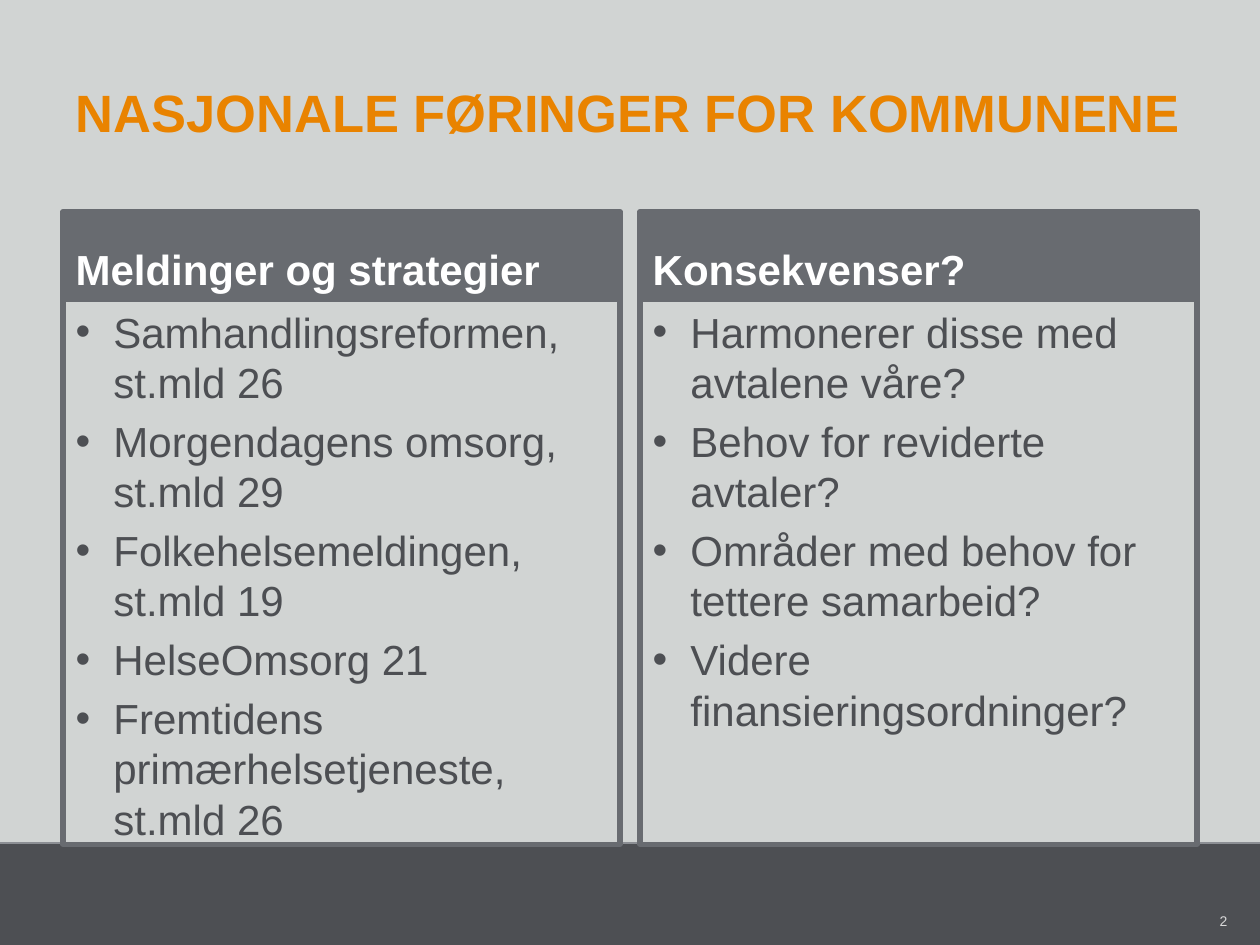
from dataclasses import dataclass

from lxml import etree
from pptx import Presentation
from pptx.dml.color import RGBColor
from pptx.enum.shapes import MSO_CONNECTOR, MSO_SHAPE
from pptx.enum.text import MSO_ANCHOR as Anchor, MSO_AUTO_SIZE as AutoSize, PP_ALIGN as Align
from pptx.oxml.ns import qn
from pptx.util import Inches, Pt


@dataclass(frozen=True)
class Theme:
    font: str = "Arial"
    backdrop: str = "D1D4D3"
    band: str = "4D4F53"
    band_edge: str = "8C8F94"
    panel: str = "686B70"
    accent: str = "E98300"
    body: str = "4D4F53"
    light: str = "FFFFFF"
    number: str = "D9D9D9"
    title_size: int = 30
    text_size: int = 24
    number_size: int = 8


THEME = Theme()
COMPARISON_LAYOUT = 4
BAND_TOP = 6.69
PANEL_LEFT, PANEL_TOP = 0.5, 1.68
PANEL_WIDTH, PANEL_GAP = 4.42, 0.16
HEAD_HEIGHT, LIST_HEIGHT = 0.7, 4.32
BULLET_INDENT = 0.3

COLUMNS = [
    ("Meldinger og strategier", [
        "Samhandlingsreformen, st.mld 26",
        "Morgendagens omsorg, st.mld 29",
        "Folkehelsemeldingen, st.mld 19",
        "HelseOmsorg 21",
        "Fremtidens primærhelsetjeneste, st.mld 26",
    ]),
    ("Konsekvenser?", [
        "Harmonerer disse med avtalene våre?",
        "Behov for reviderte avtaler?",
        "Områder med behov for tettere samarbeid?",
        "Videre finansieringsordninger?",
    ]),
]


def rgb(value):
    return RGBColor.from_string(value)


def set_all(target, values):
    for name, value in values.items():
        setattr(target, name, value)


def place(shape, left, top, width, height):
    set_all(shape, {"left": Inches(left), "top": Inches(top),
                    "width": Inches(width), "height": Inches(height)})


def write(shape, lines, size, color, bold=False, anchor=Anchor.TOP, align=Align.LEFT,
          bullets=False):
    frame = shape.text_frame
    set_all(frame, {"word_wrap": True, "auto_size": AutoSize.NONE, "vertical_anchor": anchor})
    for index, line in enumerate(lines):
        para = frame.add_paragraph() if index else frame.paragraphs[0]
        span = para.add_run()
        span.text = line
        if bullets:
            add_bullet(para)
        set_all(para, {"alignment": align, "line_spacing": 1.0,
                       "space_before": Pt(0.2 * size if index else 0)})
        set_all(span.font, {"name": THEME.font, "size": Pt(size), "bold": bold})
        span.font.color.rgb = rgb(color)


def add_bullet(para):
    props = para._p.get_or_add_pPr()
    props.set("marL", str(Inches(BULLET_INDENT)))
    props.set("indent", str(-Inches(BULLET_INDENT)))
    etree.SubElement(props, qn("a:buChar")).set("char", "•")


def outline(shape, color, width):
    shape.line.color.rgb = rgb(color)
    shape.line.width = Pt(width)


def add_backdrop(page, width, height):
    """Colour the page and lay the footer band behind the placeholders."""
    page.background.fill.solid()
    page.background.fill.fore_color.rgb = rgb(THEME.backdrop)

    band = page.shapes.add_shape(MSO_SHAPE.RECTANGLE, 0, Inches(BAND_TOP),
                                 width, height - Inches(BAND_TOP))
    band.shadow.inherit = False
    band.fill.solid()
    band.fill.fore_color.rgb = rgb(THEME.band)
    band.line.fill.background()

    edge = page.shapes.add_connector(MSO_CONNECTOR.STRAIGHT, 0, Inches(BAND_TOP),
                                     width, Inches(BAND_TOP))
    outline(edge, THEME.band_edge, 1.25)
    etree.SubElement(edge._element.spPr, qn("a:effectLst"))

    for shape in (band, edge):
        page.shapes.title.element.addprevious(shape.element)


def add_page_number(page, number):
    box = page.shapes.add_textbox(0, 0, 0, 0)
    place(box, 9.25, 7.19, 0.59, 0.24)
    write(box, [number], THEME.number_size, THEME.number,
          anchor=Anchor.MIDDLE, align=Align.RIGHT)


def fill_title(title, text):
    place(title, 0.5, 0.59, 9.06, 0.59)
    write(title, [text], THEME.title_size, THEME.accent, bold=True, anchor=Anchor.MIDDLE)


def fill_column(head, body, left, heading, items):
    place(head, left, PANEL_TOP, PANEL_WIDTH, HEAD_HEIGHT)
    place(body, left, PANEL_TOP + HEAD_HEIGHT, PANEL_WIDTH, LIST_HEIGHT)
    for shape in (head, body):
        outline(shape, THEME.panel, 3)
    head.fill.solid()
    head.fill.fore_color.rgb = rgb(THEME.panel)
    write(head, [heading], THEME.text_size, THEME.light, bold=True, anchor=Anchor.BOTTOM)
    write(body, items, THEME.text_size, THEME.body, bullets=True)


def main():
    deck = Presentation()
    set_all(deck, {"slide_width": Inches(10), "slide_height": Inches(7.5)})
    page = deck.slides.add_slide(deck.slide_layouts[COMPARISON_LAYOUT])

    add_backdrop(page, deck.slide_width, deck.slide_height)
    fill_title(page.shapes.title, "NASJONALE FØRINGER FOR KOMMUNENE")
    for index, (heading, items) in enumerate(COLUMNS):
        head, body = (page.placeholders[2 * index + offset] for offset in (1, 2))
        left = PANEL_LEFT + index * (PANEL_WIDTH + PANEL_GAP)
        fill_column(head, body, left, heading, items)
    add_page_number(page, "2")
    deck.save("out.pptx")


if __name__ == "__main__":
    main()
